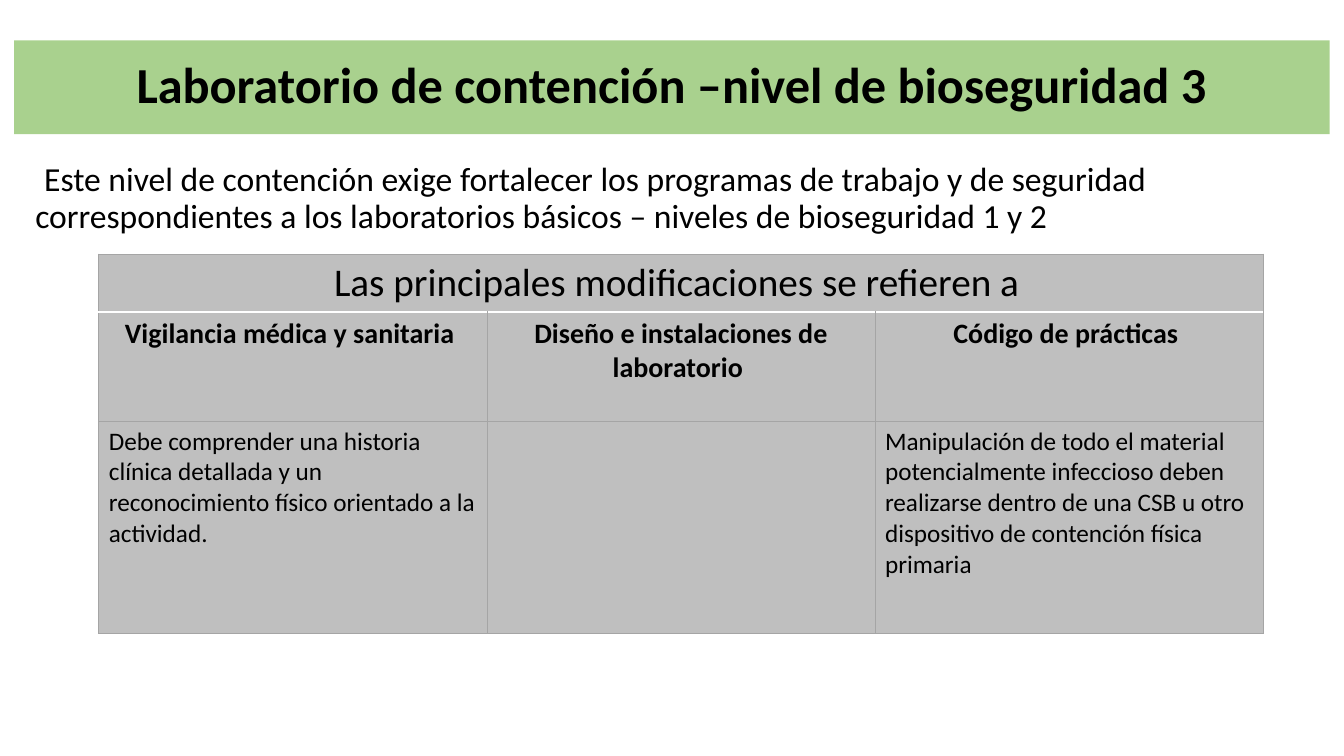
"""Build the slide on the biosafety level 3 containment laboratory."""
from dataclasses import dataclass

from lxml import etree
from pptx import Presentation
from pptx import util as u
from pptx.dml.color import RGBColor
from pptx.enum import shapes, text
from pptx.oxml.ns import qn

TITLE = "Laboratorio de contención –nivel de bioseguridad 3"
INTRO = (
    "Este nivel de contención exige fortalecer los programas de trabajo y de seguridad "
    "correspondientes a los laboratorios básicos – niveles de bioseguridad 1 y 2"
)
ROWS = [
    ["Las principales modificaciones se refieren a ", "", ""],
    ["Vigilancia médica y sanitaria ", "Diseño e instalaciones de laboratorio ",
     "Código de prácticas "],
    ["Debe comprender una historia clínica detallada y un reconocimiento físico "
     "orientado a la actividad.",
     "",
     "Manipulación de todo el material potencialmente infeccioso deben realizarse "
     "dentro de una CSB u otro dispositivo de contención física primaria"],
]
ROW_HEIGHTS = [1.46, 2.75, 5.36]
COLUMN_WIDTH = 9.78


@dataclass(frozen=True)
class Theme:
    """Colours, font and type sizes."""
    font: str = "Calibri"
    ink: str = "000000"
    banner: str = "A9D18E"
    cell: str = "BFBFBF"
    grid: str = "A5A5A5"
    divider: str = "FFFFFF"
    title: int = 36
    lead: int = 28
    intro: int = 24
    row_sizes: tuple = (28, 20, 18)


THEME = Theme()
CENTER, LEFT = text.PP_ALIGN.CENTER, text.PP_ALIGN.LEFT


def paint(target, colour):
    """Give a shape or cell a solid fill."""
    target.fill.solid()
    target.fill.fore_color.rgb = RGBColor.from_string(colour)


def write(para, words, size, bold=False):
    """Add one run to a paragraph."""
    span = para.add_run()
    span.text = words
    span.font.name = THEME.font
    span.font.size = u.Pt(size)
    span.font.bold = bold
    span.font.color.rgb = RGBColor.from_string(THEME.ink)


def border(cell, side, colour, width):
    """Draw one edge of a table cell."""
    line = etree.SubElement(cell._tc.get_or_add_tcPr(), qn(f"a:ln{side}"), w=str(u.Pt(width)))
    fill = etree.SubElement(line, qn("a:solidFill"))
    etree.SubElement(fill, qn("a:srgbClr"), val=colour)


def add_banner(page):
    """Place the title on its green band."""
    banner = page.shapes.add_shape(
        shapes.MSO_SHAPE.RECTANGLE, u.Cm(0.36), u.Cm(1.02), u.Cm(33.15), u.Cm(2.36))
    banner.shadow.inherit = False
    paint(banner, THEME.banner)
    banner.line.fill.background()
    banner.text_frame.word_wrap = True
    banner.text_frame.vertical_anchor = text.MSO_ANCHOR.MIDDLE
    para = banner.text_frame.paragraphs[0]
    para.alignment = CENTER
    para.line_spacing = 0.9
    write(para, TITLE, THEME.title, bold=True)


def add_intro(page):
    """Place the introductory sentence."""
    box = page.shapes.add_textbox(u.Cm(0.64), u.Cm(3.84), u.Cm(33.53), u.Cm(13.89))
    box.text_frame.word_wrap = True
    para = box.text_frame.paragraphs[0]
    para.line_spacing = 0.9
    para.space_before = u.Pt(10)
    write(para, " ", THEME.lead)
    write(para, INTRO, THEME.intro)


def add_changes(page):
    """Place the table of modifications."""
    count = len(ROWS[0])
    table = page.shapes.add_table(
        len(ROWS), count, u.Cm(2.49), u.Cm(6.4),
        u.Cm(COLUMN_WIDTH * count), u.Cm(sum(ROW_HEIGHTS))).table
    table.first_row = table.horz_banding = False
    for column in table.columns:
        column.width = u.Cm(COLUMN_WIDTH)
    for index, (words, height) in enumerate(zip(ROWS, ROW_HEIGHTS)):
        table.rows[index].height = u.Cm(height)
        divided = {0: "B", 1: "T"}.get(index)
        for cell, phrase in zip(table.rows[index].cells, words):
            for side in "LRTB":
                edge = (THEME.divider, 1) if side == divided else (THEME.grid, 0.5)
                border(cell, side, *edge)
            paint(cell, THEME.cell)
            para = cell.text_frame.paragraphs[0]
            para.alignment = LEFT if index == 2 else CENTER
            if phrase:
                write(para, phrase, THEME.row_sizes[index], bold=index == 1)
    table.cell(0, 0).merge(table.cell(0, count - 1))


def main():
    """Assemble and save the deck."""
    deck = Presentation()
    deck.slide_width, deck.slide_height = u.Cm(33.87), u.Cm(19.05)
    page = deck.slides.add_slide(deck.slide_layouts[6])
    add_banner(page)
    add_intro(page)
    add_changes(page)
    deck.save("out.pptx")


if __name__ == "__main__":
    main()
